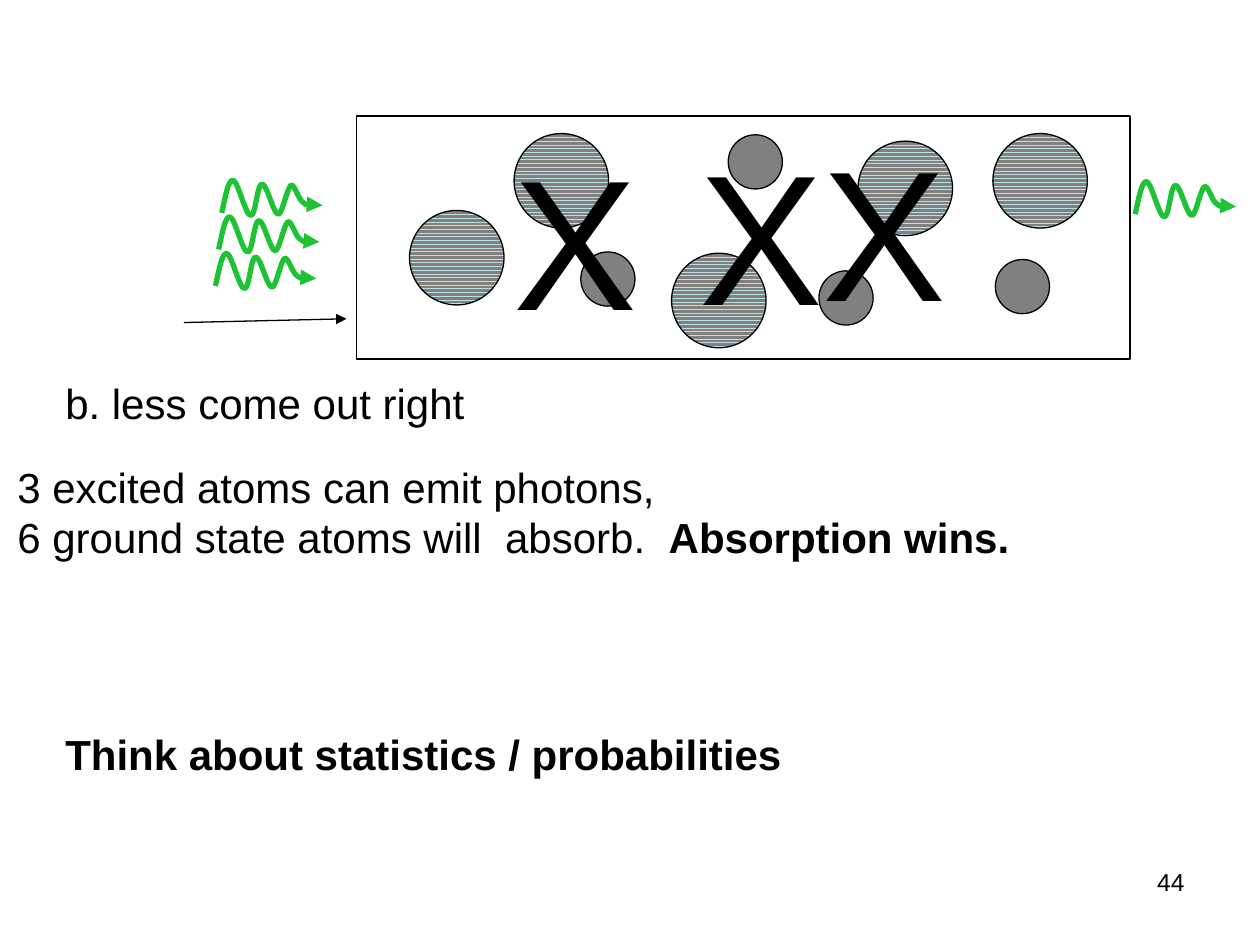
from lxml.etree import SubElement
from pptx import Presentation
from pptx.dml.color import RGBColor
from pptx.enum.dml import MSO_PATTERN
from pptx.enum.shapes import MSO_CONNECTOR, MSO_SHAPE
from pptx.enum.text import MSO_AUTO_SIZE, PP_ALIGN
from pptx.oxml.ns import qn
from pptx.util import Inches, Pt

BLACK, GRAY, PALE, GREEN = "000000", "808080", "BBE0E3", "1EC235"

GROUND_SIZE, EXCITED_SIZE = 0.75, 0.43
GROUND_ATOMS = [(4.08, 1.06), (5.33, 2.01), (6.81, 1.12), (7.88, 1.06), (3.25, 1.67)]
EXCITED_ATOMS = [(4.61, 2.0), (6.5, 2.15), (5.78, 1.07), (7.9, 2.06)]

PHOTON_OUT = (9.01, 1.44)
PHOTONS_IN = [(1.76 - 0.025 * i, 1.43 + 0.29 * i) for i in range(3)]
WAVE = [
    (0, 0.26),
    (0.03, 0.13), (0.05, 0), (0.09, 0),
    (0.13, 0.01), (0.19, 0.28), (0.23, 0.28),
    (0.27, 0.29), (0.28, 0.03), (0.32, 0.03),
    (0.36, 0.03), (0.41, 0.27), (0.45, 0.27),
    (0.48, 0.27), (0.52, 0.06), (0.55, 0.04),
    (0.58, 0.03), (0.61, 0.16), (0.65, 0.18),
    (0.69, 0.21), (0.78, 0.19), (0.8, 0.2),
]

CROSSES = [(3.98, 0.94), (5.45, 0.9), (6.43, 0.87)]
ANSWER = [[("b. less come out right", False)]]
REASON = [
    [("3 excited atoms can emit photons,", False)],
    [("6 ground state atoms will  absorb.  ", False), ("Absorption wins.", True)],
]
HINT = [[("Think about statistics / probabilities", True)]]
CROSS = [[("X", False)]]
PAGE_NUMBER = [[("44", False)]]

prs = Presentation()
prs.slide_width, prs.slide_height = Inches(10), Inches(7.5)
slide = prs.slides.add_slide(prs.slide_layouts[6])
shapes = slide.shapes


def color(value):
    return RGBColor.from_string(value)


def outline(shape, value=BLACK, width=0.75):
    shape.line.color.rgb = color(value)
    shape.line.width = Pt(width)


def add_arrowhead(shape):
    SubElement(shape.line._get_or_add_ln(), qn("a:tailEnd"), type="triangle")


def add_outlined(preset, left, top, width, height):
    shape = shapes.add_shape(preset, Inches(left), Inches(top), Inches(width), Inches(height))
    shape.shadow.inherit = False
    shape.fill.background()
    outline(shape)
    return shape


def add_atom(position, size, excited):
    fill = add_outlined(MSO_SHAPE.OVAL, *position, size, size).fill
    if excited:
        fill.solid()
        fill.fore_color.rgb = color(GRAY)
    else:
        fill.patterned()
        fill.pattern = MSO_PATTERN.ZIG_ZAG
        fill.fore_color.rgb = color(PALE)
        fill.back_color.rgb = color(GRAY)


def add_photon(left, top):
    points = [(Inches(left + x), Inches(top + y)) for x, y in WAVE]
    builder = shapes.build_freeform(*points[0])
    builder.add_line_segments(points[1:], close=False)
    photon = builder.convert_to_shape()
    photon.shadow.inherit = False
    photon.fill.background()
    outline(photon, GREEN, 3)
    add_arrowhead(photon)
    outline_path = next(photon._element.iter(qn("a:path")))
    segments = outline_path.findall(qn("a:lnTo"))
    for start in range(0, len(segments), 3):
        curve = SubElement(outline_path, qn("a:cubicBezTo"))
        for segment in segments[start:start + 3]:
            curve.append(segment[0])
            outline_path.remove(segment)


def add_text(paragraphs, left, top, width, height, size=24, align=PP_ALIGN.LEFT, wrap=False):
    frame = shapes.add_textbox(Inches(left), Inches(top), Inches(width), Inches(height)).text_frame
    frame.word_wrap = wrap
    frame.auto_size = MSO_AUTO_SIZE.NONE if wrap else MSO_AUTO_SIZE.SHAPE_TO_FIT_TEXT
    for index, runs in enumerate(paragraphs):
        paragraph = frame.paragraphs[0] if index == 0 else frame.add_paragraph()
        paragraph.alignment = align
        for words, bold in runs:
            run = paragraph.add_run()
            run.text = words
            run.font.name = "Arial"
            run.font.size = Pt(size)
            run.font.bold = bold
            run.font.color.rgb = color(BLACK)


add_text(PAGE_NUMBER, 7.17, 6.83, 2.33, 0.52, size=14, align=PP_ALIGN.RIGHT, wrap=True)
add_outlined(MSO_SHAPE.RECTANGLE, 2.83, 0.92, 6.14, 1.93)
for position in GROUND_ATOMS:
    add_atom(position, GROUND_SIZE, excited=False)
for position in EXCITED_ATOMS:
    add_atom(position, EXCITED_SIZE, excited=True)
for position in [PHOTON_OUT, *PHOTONS_IN]:
    add_photon(*position)

beam = shapes.add_connector(
    MSO_CONNECTOR.STRAIGHT, Inches(1.46), Inches(2.56), Inches(2.75), Inches(2.53))
outline(beam)
add_arrowhead(beam)
SubElement(beam._element.spPr, qn("a:effectLst"))

add_text(ANSWER, 0.42, 2.95, 3.37, 0.5)
add_text(REASON, 0.04, 3.61, 8.07, 1.7)
for position in CROSSES:
    add_text(CROSS, *position, 1.18, 1.87, size=106)
add_text(HINT, 0.42, 5.73, 6.07, 0.9)

prs.save("out.pptx")
